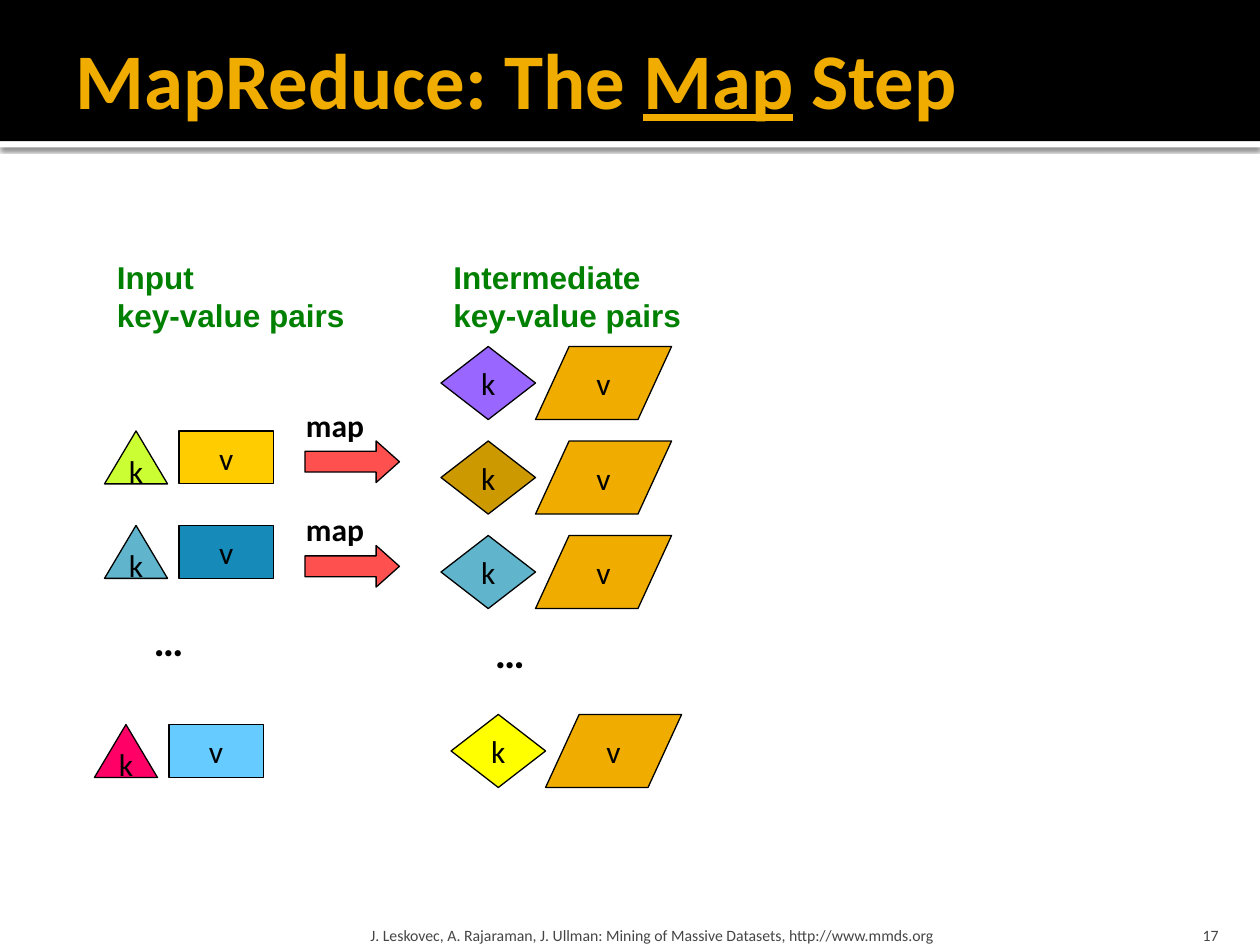
from dataclasses import dataclass

from lxml import etree
from pptx import Presentation
from pptx.dml.color import RGBColor
from pptx.enum.shapes import MSO_SHAPE
from pptx.enum.text import MSO_ANCHOR, MSO_AUTO_SIZE, PP_ALIGN
from pptx.oxml.ns import qn
from pptx.util import Inches, Pt

RECT, TRI = MSO_SHAPE.RECTANGLE, MSO_SHAPE.ISOSCELES_TRIANGLE
DIAMOND, SLANT = MSO_SHAPE.DIAMOND, MSO_SHAPE.PARALLELOGRAM
ARROW = MSO_SHAPE.RIGHT_ARROW
TOP, MIDDLE, BOTTOM = MSO_ANCHOR.TOP, MSO_ANCHOR.MIDDLE, MSO_ANCHOR.BOTTOM
LEFT, CENTER, RIGHT = PP_ALIGN.LEFT, PP_ALIGN.CENTER, PP_ALIGN.RIGHT
GROW = MSO_AUTO_SIZE.SHAPE_TO_FIT_TEXT
INSET = (0.1, 0.05, 0.1, 0.05)


@dataclass(frozen=True)
class Theme:
    body: str = "Calibri"
    label: str = "Arial"
    black: str = "000000"
    white: str = "FFFFFF"
    gold: str = "F0AD00"
    green: str = "008000"
    gray: str = "454545"
    red: str = "FF5050"
    teal: str = "60B5CC"
    blue: str = "168BBA"
    sky: str = "66CCFF"
    amber: str = "FFCC00"
    lime: str = "CCFF33"
    pink: str = "FF0066"
    violet: str = "9966FF"
    ochre: str = "CC9900"
    yellow: str = "FFFF00"
    title: int = 45
    dots: int = 24
    text: int = 18
    small: int = 9


class Deck:
    """Draws styled elements on the current slide."""

    def __init__(self, theme, slide):
        self.theme = theme
        self.slide = slide

    def run(self, para, text, size, color, font=None, bold=False, under=False):
        run = para.add_run()
        run.text = text
        run.font.name = font or self.theme.body
        run.font.size = Pt(size)
        run.font.bold = bold
        run.font.underline = under
        run.font.color.rgb = RGBColor.from_string(color)

    def shape(self, kind, box, fill, text="", line=True):
        item = self.slide.shapes.add_shape(kind, *map(Inches, box))
        item.shadow.inherit = False
        item.fill.solid()
        item.fill.fore_color.rgb = RGBColor.from_string(fill)
        if line:
            item.line.color.rgb = RGBColor.from_string(self.theme.black)
            item.line.width = Pt(0.75)
        else:
            item.line.fill.background()
        if text:
            frame = item.text_frame
            frame.word_wrap = False
            frame.vertical_anchor = MIDDLE
            para = frame.paragraphs[0]
            para.alignment = CENTER
            self.run(para, text, self.theme.text, self.theme.black)
        return item

    def shade(self, item):
        effect = item._element.spPr.find(qn("a:effectLst"))
        outer = etree.SubElement(effect, qn("a:outerShdw"), blurRad=str(Pt(2.5)),
                                 dist=str(Pt(0.8)), dir="5400000", algn="tl", rotWithShape="0")
        tint = etree.SubElement(outer, qn("a:srgbClr"), val=self.theme.black)
        etree.SubElement(tint, qn("a:alpha"), val="60000")

    def frame(self, box, wrap=True, anchor=TOP, inset=INSET):
        frame = self.slide.shapes.add_textbox(*map(Inches, box)).text_frame
        frame.word_wrap = wrap
        if not wrap:
            frame.auto_size = GROW
        frame.vertical_anchor = anchor
        sides = map(Inches, inset)
        frame.margin_left, frame.margin_top, frame.margin_right, frame.margin_bottom = sides
        return frame

    def text(self, box, lines, size, color, font=None, bold=True):
        frame = self.frame(box, wrap=False)
        for num, line in enumerate(lines):
            para = frame.add_paragraph() if num else frame.paragraphs[0]
            self.run(para, line, size, color, font, bold)

    def header(self, parts):
        t = self.theme
        self.shade(self.shape(RECT, (0, 1.12, 10, 0.05), t.white, line=False))
        self.shape(RECT, (0, 0, 10, 1.12), t.black, line=False)
        frame = self.frame((0.5, 0.08, 9, 1.08), anchor=MIDDLE, inset=(0.1, 0.05, 0.05, 0.05))
        for text, under in parts:
            self.run(frame.paragraphs[0], text, t.title, t.gold, bold=True, under=under)

    def footer(self, box, text, align, side):
        frame = self.frame(box, anchor=BOTTOM, inset=(side, 0.05, side, 0))
        frame.paragraphs[0].alignment = align
        self.run(frame.paragraphs[0], text, self.theme.small, self.theme.gray)

    def source(self, x, y, key, value):
        self.shape(RECT, (x + 0.59, y, 0.75, 0.42), value, "v")
        self.shape(TRI, (x, y, 0.5, 0.42), key, "k")

    def result(self, x, y, key):
        self.shape(DIAMOND, (x, y, 0.75, 0.58), key, "k")
        slant = self.shape(SLANT, (x + 0.75, y, 1.08, 0.58), self.theme.gold, "v")
        slant.adjustments[0] = 0.46

    def step(self, y):
        t = self.theme
        arrow = self.shape(ARROW, (2.42, y + 0.33, 0.75, 0.33), t.red)
        arrow.adjustments[1] = 0.56
        self.text((2.33, y, 0.69, 0.4), ["map"], t.text, t.black)


def main():
    deck = Presentation()
    deck.slide_width, deck.slide_height = Inches(10), Inches(7.5)
    t = Theme()
    page = Deck(t, deck.slides.add_slide(deck.slide_layouts[6]))

    page.header([("MapReduce: The ", False), ("Map", True), (" Step", False)])
    for x, name in ((0.83, "Input"), (3.5, "Intermediate")):
        page.text((x, 2, 2.03, 0.71), [name, "key-value pairs"], t.text, t.green, t.label)

    for x, y, key, value in ((0.83, 3.42, t.lime, t.amber), (0.83, 4.17, t.teal, t.blue),
                             (0.75, 5.75, t.pink, t.sky)):
        page.source(x, y, key, value)
    for y in (3.17, 4):
        page.step(y)
    for row, key in enumerate((t.violet, t.ochre, t.teal)):
        page.result(3.5, 2.75 + 0.75 * row, key)
    page.result(3.58, 5.67, t.yellow)
    for x, y in ((1.12, 4.83), (3.83, 4.92)):
        page.text((x, y, 0.55, 0.5), ["…"], t.dots, t.black)

    page.footer((2.89, 7.2, 6.02, 0.3), "J. Leskovec, A. Rajaraman, J. Ullman: "
                "Mining of Massive Datasets, http://www.mmds.org", LEFT, 0.05)
    page.footer((8.97, 7.2, 0.8, 0.3), "17", RIGHT, 0.1)
    deck.save("out.pptx")


if __name__ == "__main__":
    main()
